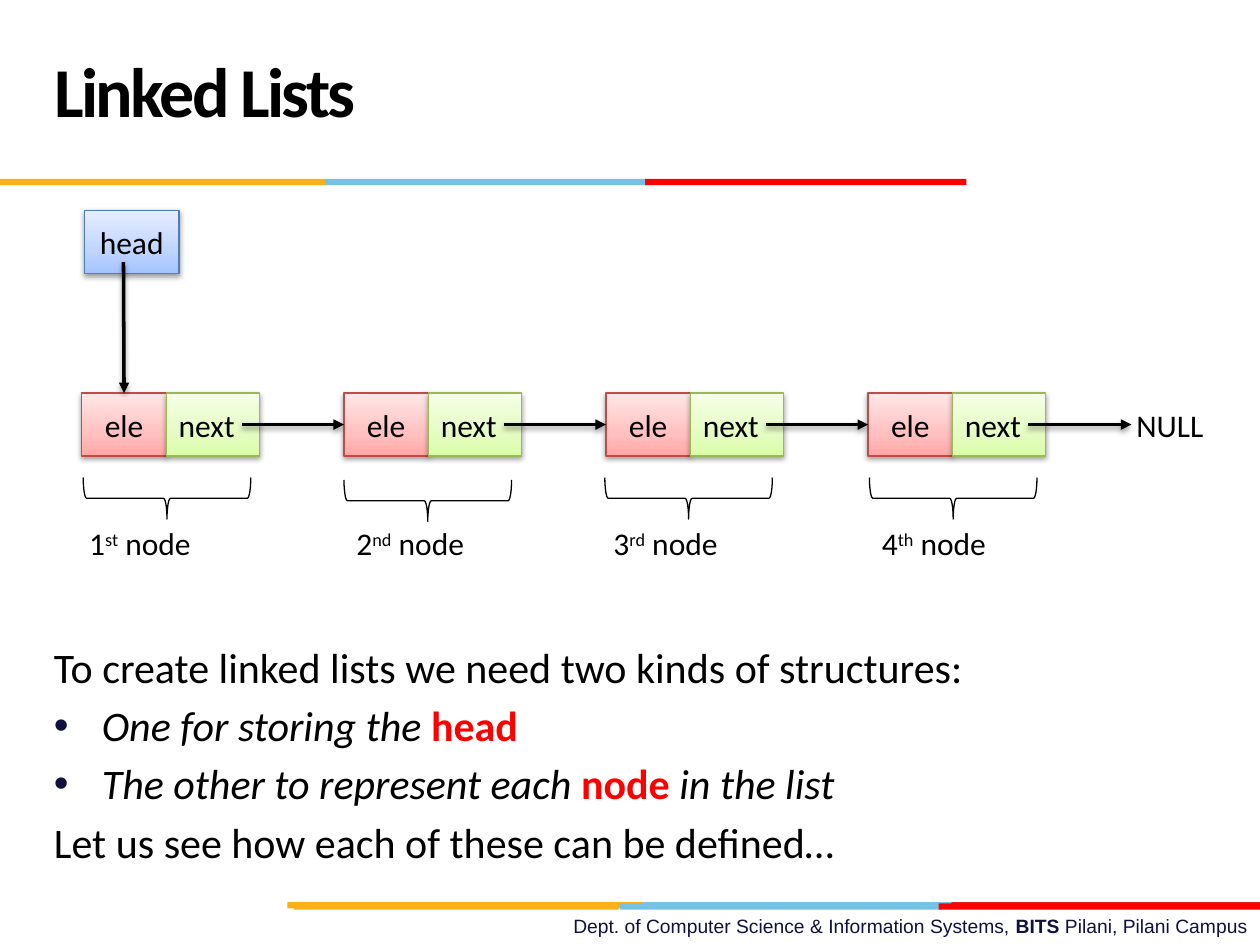
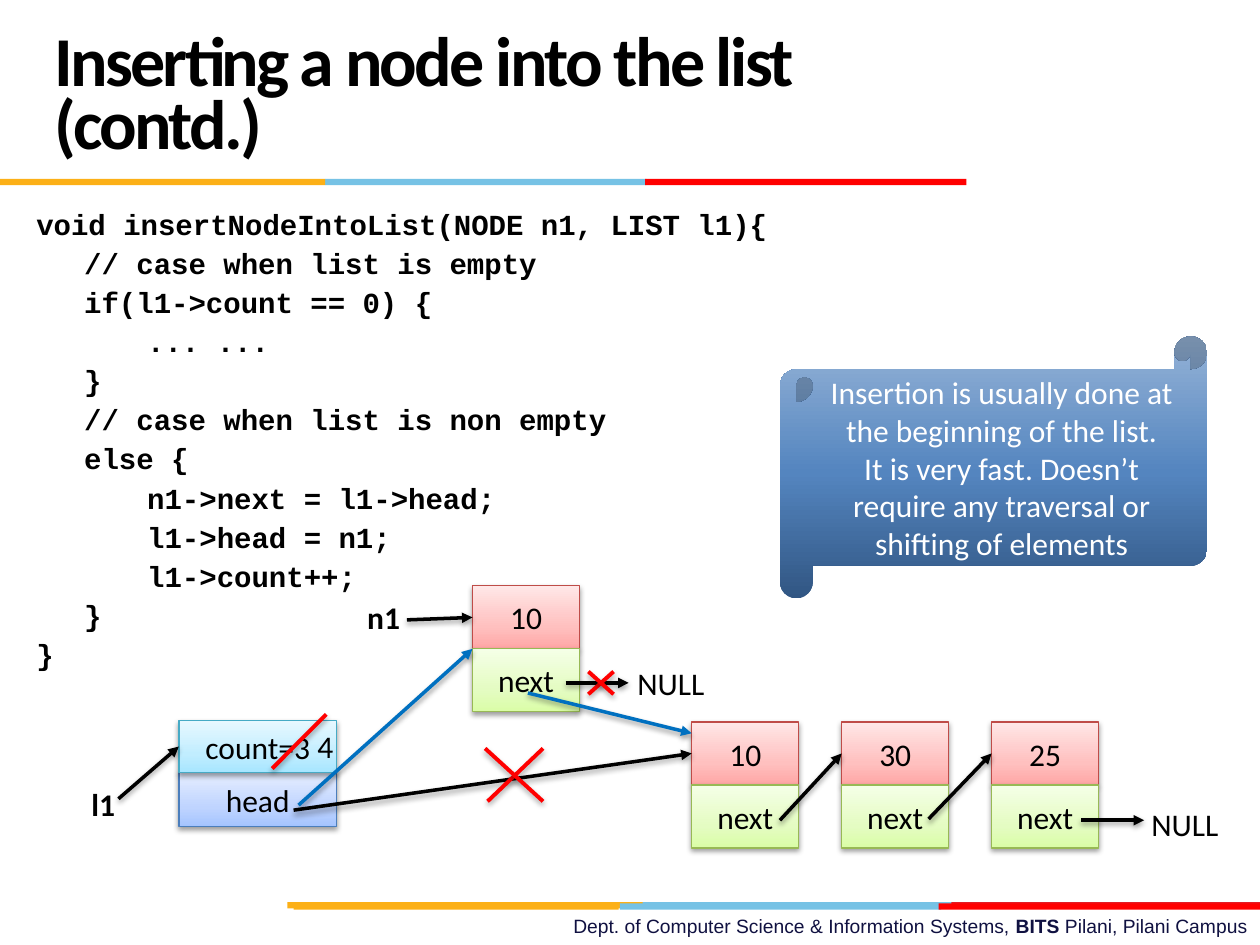
import copy

import pptx
import pptx.dml.color
import pptx.enum.shapes
import pptx.enum.text
import pptx.oxml
import pptx.oxml.ns
import pptx.util
from pptx.util import Inches

SHAPES = pptx.enum.shapes.MSO_SHAPE
ALIGN = pptx.enum.text.PP_ALIGN
ANCHOR = pptx.enum.text.MSO_ANCHOR
QN = pptx.oxml.ns.qn
NAMESPACE = pptx.oxml.ns.nsdecls("a")

COLORS = {
    "black": "000000", "white": "FFFFFF", "red": "FF0000", "blue": "0070C0",
    "navy": "101141", "gold": "FCB017", "sky": "76C2E5", "crimson": "E31C24",
}
# Gradient stops run from the bottom up: (position, colour); then the outline colour
BOXES = {
    "head": ([(0, "A4C4FF"), (0.35, "BFD4FF"), (1, "E6EEFF")], "4B7EBC"),
    "element": ([(0, "FFA6A5"), (0.35, "FFC0BF"), (1, "FFE7E7")], "BF4C48"),
    "next": ([(0, "DAFDA7"), (0.35, "E4FCC2"), (1, "F5FFE7")], "98B955"),
    "count": ([(0, "A7E6FF"), (0.35, "C1EDFF"), (1, "E7F8FF")], "46AAC5"),
    "scroll": ([(0, "315683"), (0.48, "5485BF"), (1, "95B3D7")], None),
}
# Left, top, width, colour
BANDS = [
    (5.06, 7.16, 2.55, "sky"), (7.55, 7.16, 2.45, "crimson"), (2.28, 7.16, 2.82, "gold"),
    (4.92, 7.17, 2.55, "sky"), (2.33, 7.17, 2.58, "gold"), (7.45, 7.17, 2.55, "red"),
    (2.58, 1.42, 2.55, "sky"), (0, 1.42, 2.58, "gold"), (5.12, 1.42, 2.55, "red"),
]
LABEL = {"name": "Calibri", "size": pptx.util.Pt(18), "color": "black"}
BODY = {**LABEL, "size": pptx.util.Pt(24)}
TITLE = {**LABEL, "size": pptx.util.Pt(40), "bold": True, "spc": -150}
CODE = {"name": "Courier New", "size": pptx.util.Pt(16.6), "bold": True, "color": "black"}
FOOTER = {"name": "Arial", "size": pptx.util.Pt(11), "color": "navy"}


def rgb(color):
    return pptx.dml.color.RGBColor.from_string(COLORS.get(color, color))


class Deck:
    def __init__(self):
        self.presentation = pptx.Presentation()
        self.presentation.slide_width = Inches(10)
        self.presentation.slide_height = Inches(7.5)
        self.slide = None

    def add_slide(self, title):
        self.slide = self.presentation.slides.add_slide(self.presentation.slide_layouts[5])
        for left, top, width, color in BANDS:
            band = self.slide.shapes.add_shape(
                SHAPES.RECTANGLE, Inches(left), Inches(top), Inches(width), Inches(0.05))
            band.shadow.inherit = False
            band.fill.solid()
            band.fill.fore_color.rgb = rgb(color)
            band.line.fill.background()
        self.text(0, 7.21, 10, 0.29, [[
            ("Dept. of Computer Science & Information Systems, ", {}),
            ("BITS ", {"bold": True}), ("Pilani, Pilani Campus", {})]],
            FOOTER, {"alignment": ALIGN.RIGHT})
        shape = self.slide.shapes.title
        shape.left, shape.top, shape.width, shape.height = (
            Inches(value) for value in (0.33, 0.17, 6.92, 1.25))
        self.fill_text(shape, [title], TITLE,
                       {"alignment": ALIGN.LEFT, "line_spacing": pptx.util.Pt(36)}, ANCHOR.MIDDLE)

    def fill_text(self, shape, paragraphs, style, layout, anchor=ANCHOR.TOP):
        """Each paragraph is a string or a list of (text, format changes)."""
        frame = shape.text_frame
        frame.word_wrap = True
        frame.auto_size = pptx.enum.text.MSO_AUTO_SIZE.NONE
        frame.vertical_anchor = anchor
        for index, runs in enumerate(paragraphs):
            paragraph = frame.add_paragraph() if index else frame.paragraphs[0]
            for name, value in layout.items():
                if index or name != "space_before":
                    setattr(paragraph, name, value)
            for text, changes in [(runs, {})] if isinstance(runs, str) else runs:
                run = paragraph.add_run()
                run.text = text
                self.format_run(run, {**style, **changes})

    def format_run(self, run, values):
        for name, value in values.items():
            if name == "color":
                run.font.color.rgb = rgb(value)
            elif name in ("spc", "baseline"):
                run._r.get_or_add_rPr().set(name, str(value))
            else:
                setattr(run.font, name, value)

    def text(self, left, top, width, height, paragraphs, style=LABEL, layout=None):
        shape = self.slide.shapes.add_textbox(
            Inches(left), Inches(top), Inches(width), Inches(height))
        self.fill_text(shape, paragraphs, style, layout or {})
        return shape

    def hang(self, paragraph, bullet=None):
        properties = paragraph._p.get_or_add_pPr()
        properties.set("marL", str(Inches(0.38)))
        properties.set("indent", str(-Inches(0.38)))
        if bullet:
            for markup in (f'<a:buClr {NAMESPACE}><a:srgbClr val="{COLORS["navy"]}"/></a:buClr>',
                           f'<a:buFont {NAMESPACE} typeface="Arial"/>',
                           f'<a:buChar {NAMESPACE} char="{bullet}"/>'):
                properties.append(pptx.oxml.parse_xml(markup))

    def shadow(self, shape, opacity=38, distance=20000):
        properties = shape._element.spPr
        for effects in properties.findall(QN("a:effectLst")):
            properties.remove(effects)
        properties.append(pptx.oxml.parse_xml(
            f'<a:effectLst {NAMESPACE}><a:outerShdw blurRad="40000" dist="{distance}" '
            f'dir="5400000" rotWithShape="0"><a:srgbClr val="{COLORS["black"]}">'
            f'<a:alpha val="{opacity * 1000}"/></a:srgbClr></a:outerShdw></a:effectLst>'))

    def box(self, kind, left, top, width, height, paragraphs, preset=SHAPES.RECTANGLE,
            alignment=ALIGN.CENTER, color="black"):
        stops, outline = BOXES[kind]
        shape = self.slide.shapes.add_shape(
            preset, Inches(left), Inches(top), Inches(width), Inches(height))
        shape.shadow.inherit = False
        shape.fill.gradient()
        shape.fill.gradient_angle = 90
        stop_list = shape._element.spPr.find(".//" + QN("a:gsLst"))
        stop_list.append(copy.deepcopy(stop_list[0]))
        for stop, (position, stop_color) in zip(shape.fill.gradient_stops, stops):
            stop.position = position
            stop.color.rgb = rgb(stop_color)
        if outline:
            shape.line.color.rgb = rgb(outline)
            shape.line.width = pptx.util.Pt(0.75)
            self.shadow(shape)
        else:
            shape.line.fill.background()
        self.fill_text(shape, paragraphs, {**LABEL, "color": color},
                       {"alignment": alignment}, ANCHOR.MIDDLE)
        return shape

    def node(self, left, top, value):
        """A value cell stacked on its next cell; returns the value cell."""
        cell = self.box("element", left, top, 0.85, 0.5, [value])
        self.box("next", left, top + 0.5, 0.85, 0.5, ["next"])
        return cell

    def brace(self, left, top):
        shape = self.slide.shapes.add_shape(
            SHAPES.RIGHT_BRACE, Inches(left), Inches(top), Inches(0.33), Inches(1.33))
        shape.rotation = 90
        shape.shadow.inherit = False
        shape.fill.background()
        shape.line.color.rgb = rgb("black")
        shape.line.width = pptx.util.Pt(0.75)

    def line(self, start, end, color, width):
        connector = self.slide.shapes.add_connector(
            pptx.enum.shapes.MSO_CONNECTOR.STRAIGHT, *(Inches(value) for value in (*start, *end)))
        connector.line.color.rgb = rgb(color)
        connector.line.width = pptx.util.Pt(width)
        return connector

    def arrow(self, start, end, color="black", target=None, side=1):
        connector = self.line(start, end, color, 2)
        connector._element.spPr.find(QN("a:ln")).append(
            pptx.oxml.parse_xml(f'<a:tailEnd {NAMESPACE} type="triangle"/>'))
        self.shadow(connector)
        if target is not None:
            connector.end_connect(target, side)

    def strike(self, start, end):
        self.shadow(self.line(start, end, "red", 2.25), 35, 23000)


def build_linked_lists(deck):
    deck.add_slide("Linked Lists")

    # Explanation
    italic, keyword = {"italic": True}, {"bold": True, "color": "red"}
    body = deck.text(0.33, 5.04, 9, 1.96, [
        "To create linked lists we need two kinds of structures:",
        [("One for storing the ", italic), ("head", keyword)],
        [("The other to represent each ", italic), ("node ", keyword), ("in the list", italic)],
        "Let us see how each of these can be defined…",
    ], BODY, {"space_before": pptx.util.Pt(4.5)})
    for paragraph in body.text_frame.paragraphs[1:3]:
        deck.hang(paragraph, "•")

    # Node cells, braces and labels
    deck.box("head", 0.67, 1.67, 0.75, 0.5, ["head"])
    nodes = [("1", "st", 1.16, 3.29, 0.61), ("2", "nd", 3.23, 3.31, 2.73),
             ("3", "rd", 5.3, 3.29, 4.77), ("4", "th", 7.4, 3.29, 6.9)]
    elements = []
    for index, (number, suffix, brace_left, brace_top, label_left) in enumerate(nodes):
        left = 0.65 + 2.08 * index
        elements.append(deck.box("element", left, 3.12, 0.67, 0.5, ["ele"]))
        deck.box("next", left + 0.67, 3.12, 0.74, 0.5, ["next"], alignment=ALIGN.LEFT)
        deck.brace(brace_left, brace_top)
        deck.text(label_left, 4.11, 1.42, 0.4,
                  [[(number, {}), (suffix, {"baseline": 30000}), (" node", {})]])
    deck.text(8.92, 3.17, 0.77, 0.4, ["NULL"])

    # Links
    deck.arrow((0.98, 2.08), (0.98, 3.12), target=elements[0], side=0)
    for index, target in enumerate(elements[1:] + [None]):
        start = 1.92 + 2.08 * index
        deck.arrow((start, 3.37), (start + 0.82, 3.37), target=target)


def build_insertion(deck):
    deck.add_slide("Inserting a node into the list (contd.)")

    # Code
    code = deck.text(0.19, 1.62, 9.64, 3.8, [
        "void insertNodeIntoList(NODE n1, LIST l1){",
        "\t// case when list is empty",
        "\tif(l1->count == 0) {",
        "\t\t... ...",
        "\t}",
        "\t// case when list is non empty",
        "\telse {",
        "\t\tn1->next = l1->head;",
        "\t\tl1->head = n1;",
        "\t\tl1->count++;",
        "\t}",
        "}",
    ], CODE, {"line_spacing": 0.9, "space_before": pptx.util.Pt(4.4)})
    for paragraph in code.text_frame.paragraphs:
        deck.hang(paragraph)

    # List header and existing nodes
    deck.box("head", 1.42, 6.13, 1.25, 0.43, ["head"])
    count = deck.box("count", 1.42, 5.72, 1.25, 0.41, ["count=3"])
    first, second, third = [
        deck.node(5.49 + 1.19 * index, 5.73, value)
        for index, value in enumerate(["10", "30", "25"])]
    deck.text(9.04, 6.34, 0.77, 0.4, ["NULL"])
    deck.arrow((8.58, 6.51), (9.08, 6.51))
    deck.arrow((7.37, 6.5), (7.87, 5.98), target=third)
    deck.arrow((6.19, 6.51), (6.68, 5.98), target=second)
    deck.arrow((2.33, 6.43), (5.49, 5.98), target=first)

    # New node
    new_node = deck.node(3.75, 4.65, "10")
    deck.text(4.96, 5.22, 0.77, 0.4, ["NULL"])
    deck.arrow((4.49, 5.42), (4.99, 5.42))

    # Replaced links and count
    deck.strike((4.87, 5.33), (4.67, 5.51))
    deck.strike((4.87, 5.51), (4.67, 5.33))
    deck.arrow((4.19, 5.5), (5.49, 5.82), "blue")
    deck.strike((4.31, 5.94), (3.87, 6.36))
    deck.strike((4.31, 6.36), (3.85, 5.94))
    deck.arrow((2.37, 6.39), (3.75, 5.15), "blue")
    deck.strike((2.59, 5.67), (2.16, 6.1))
    centered = {"alignment": ALIGN.CENTER}
    deck.text(2.42, 5.72, 0.32, 0.4, ["4"], layout=centered)

    # Remark
    deck.box("scroll", 6.19, 2.67, 3.39, 2.08, [
        "Insertion is usually done at the beginning of the list.",
        "It is very fast. Doesn’t require any traversal or shifting of elements",
    ], SHAPES.HORIZONTAL_SCROLL, color="white")

    # Variables
    variable = {**LABEL, "bold": True}
    deck.text(0.16, 6.18, 1.32, 0.4, ["l1"], variable, centered)
    deck.arrow((0.94, 6.34), (1.42, 5.92), target=count)
    deck.text(2.68, 4.7, 0.73, 0.4, ["n1"], variable, centered)
    deck.arrow((3.23, 4.92), (3.75, 4.92), target=new_node)


def main():
    deck = Deck()
    build_linked_lists(deck)
    build_insertion(deck)
    deck.presentation.save("out.pptx")


if __name__ == "__main__":
    main()
